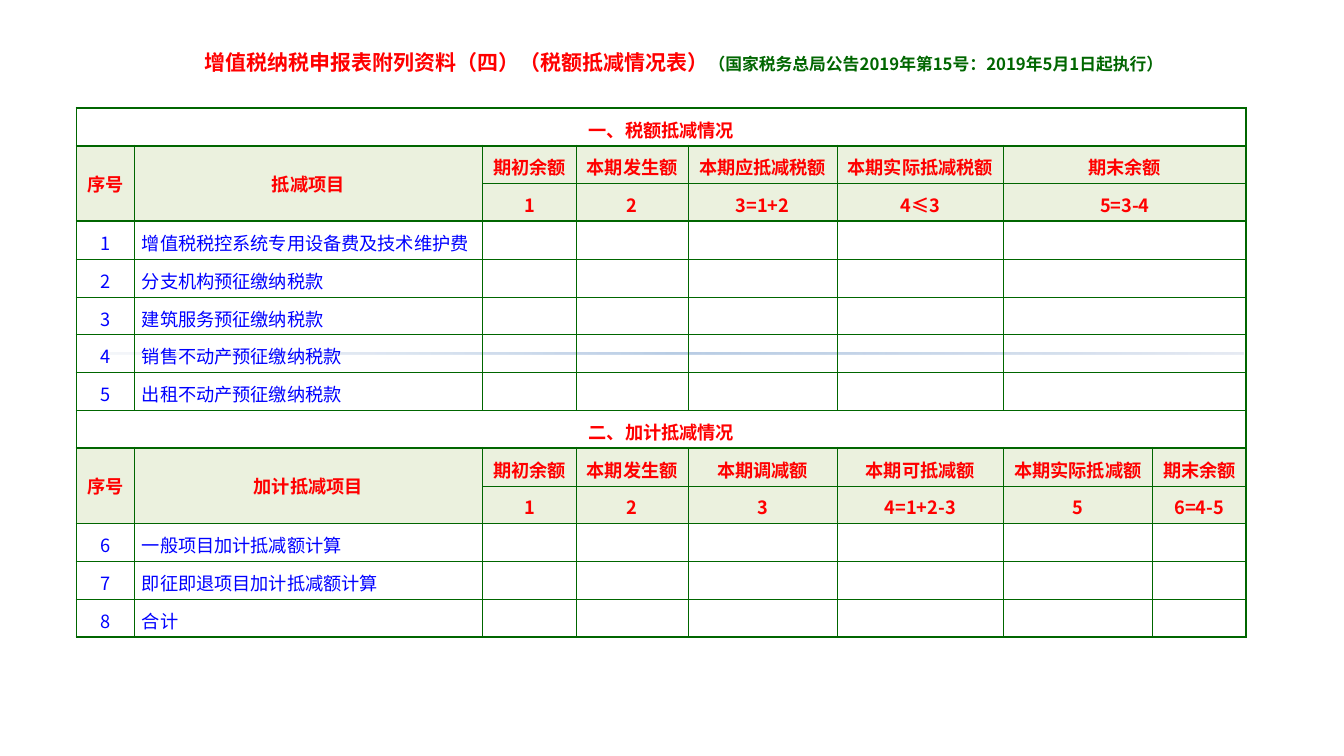
from lxml import etree
from pptx import Presentation
from pptx.dml.color import RGBColor
from pptx.enum.shapes import MSO_SHAPE
from pptx.enum.text import MSO_ANCHOR, PP_ALIGN
from pptx.oxml.ns import qn
from pptx.util import Inches, Pt

FONT = "Noto Sans CJK SC"
RED = RGBColor(0xFF, 0x00, 0x00)
GREEN = RGBColor(0x00, 0x66, 0x00)
BLUE = RGBColor(0x00, 0x00, 0xFF)
HEADER_FILL = RGBColor(0xEB, 0xF1, 0xDE)
PALE_RULE = RGBColor(0xD0, 0xD8, 0xE8)
DEEP_RULE = RGBColor(0x4F, 0x81, 0xBD)
CENTER, LEFT = PP_ALIGN.CENTER, PP_ALIGN.LEFT
MIDDLE = MSO_ANCHOR.MIDDLE
RECTANGLE = MSO_SHAPE.RECTANGLE

TITLE = "增值税纳税申报表附列资料（四）（税额抵减情况表）"
NOTICE = "（国家税务总局公告2019年第15号：2019年5月1日起执行）"
SECTIONS = [
    {
        "title": "一、税额抵减情况",
        "item_heading": "抵减项目",
        "headings": ["期初余额", "本期发生额", "本期应抵减税额", "本期实际抵减税额", "期末余额"],
        "formulas": ["1", "2", "3=1+2", "4≤3", "5=3-4"],
        "items": ["增值税税控系统专用设备费及技术维护费", "分支机构预征缴纳税款",
                  "建筑服务预征缴纳税款", "销售不动产预征缴纳税款", "出租不动产预征缴纳税款"],
    },
    {
        "title": "二、加计抵减情况",
        "item_heading": "加计抵减项目",
        "headings": ["期初余额", "本期发生额", "本期调减额", "本期可抵减额", "本期实际抵减额", "期末余额"],
        "formulas": ["1", "2", "3", "4=1+2-3", "5", "6=4-5"],
        "items": ["一般项目加计抵减额计算", "即征即退项目加计抵减额计算", "合计"],
    },
]
COLUMN_WIDTHS = [0.57, 3.46, 0.93, 1.11, 1.48, 1.65, 1.48, 0.93]
TABLE_LEFT, TABLE_TOP, TABLE_HEIGHT = 0.76, 1.07, 5.25
RULE_STOPS = [(0, PALE_RULE, 20), (50, DEEP_RULE, 40), (100, PALE_RULE, 50)]
THIN, THICK, TABLE_SIZE = 0.25, 1.5, 13
HEADER_ROWS = 3
COLUMNS = len(COLUMN_WIDTHS)
ROWS = sum(HEADER_ROWS + len(section["items"]) for section in SECTIONS)


def add_text(paragraph, text, size=TABLE_SIZE, color=RED, bold=True, align=CENTER):
    paragraph.alignment = align
    run = paragraph.add_run()
    run.text = text
    font = run.font
    font.name, font.size, font.bold = FONT, Pt(size), bold
    font.color.rgb = color
    etree.SubElement(run._r.get_or_add_rPr(), qn("a:ea"), typeface=FONT)


def add_color(parent, color, alpha=100):
    element = etree.SubElement(parent, qn("a:srgbClr"), val=str(color))
    if alpha < 100:
        etree.SubElement(element, qn("a:alpha"), val=str(alpha * 1000))


def add_rule(slide):
    """Add the faint horizontal band that lies behind the table."""
    shape = slide.shapes.add_shape(RECTANGLE, Inches(1), Inches(3.5), Inches(11.34), Inches(0.02))
    shape.shadow.inherit = False
    shape.line.fill.background()
    shape.fill.gradient()
    shape.fill.gradient_angle = 0
    stops = shape._element.spPr.find(".//" + qn("a:gsLst"))
    for stop in list(stops):
        stops.remove(stop)
    for position, color, alpha in RULE_STOPS:
        add_color(etree.SubElement(stops, qn("a:gs"), pos=str(position * 1000)), color, alpha)


def add_title(slide):
    box = slide.shapes.add_textbox(Inches(1.71), Inches(0.44), Inches(10.16), Inches(0.35))
    frame = box.text_frame
    frame.word_wrap = True
    frame.vertical_anchor = MIDDLE
    frame.margin_left = frame.margin_right = frame.margin_top = frame.margin_bottom = 0
    add_text(frame.paragraphs[0], TITLE, size=15)
    add_text(frame.paragraphs[0], NOTICE, size=12, color=GREEN)


def fill_cell(cell, text, **text_format):
    cell.vertical_anchor = MIDDLE
    cell.margin_left = cell.margin_right = cell.margin_top = Inches(0.08)
    cell.margin_bottom = Inches(0.08 if cell.span_height > 1 else 0.03)
    add_text(cell.text_frame.paragraphs[0], text, **text_format)


def add_section(table, top, section):
    """Write one section of the form and return the row after it."""
    last = COLUMNS - 1
    first_item = top + HEADER_ROWS
    after = first_item + len(section["items"])
    table.cell(top, 0).merge(table.cell(top, last))
    fill_cell(table.cell(top, 0), section["title"])
    for column, heading in enumerate(["序号", section["item_heading"]]):
        table.cell(top + 1, column).merge(table.cell(top + 2, column))
        fill_cell(table.cell(top + 1, column), heading)
    last_used = len(section["headings"]) + 1
    if last_used < last:
        for row in range(top + 1, after):
            table.cell(row, last_used).merge(table.cell(row, last))
    for row, labels in enumerate([section["headings"], section["formulas"]], top + 1):
        for column, label in enumerate(labels, 2):
            fill_cell(table.cell(row, column), label)
    first_number = first_item - HEADER_ROWS + 1 if top == 0 else first_item - 2 * HEADER_ROWS + 1
    for offset, item in enumerate(section["items"]):
        row = first_item + offset
        fill_cell(table.cell(row, 0), str(first_number + offset), color=BLUE, bold=False)
        fill_cell(table.cell(row, 1), item, color=BLUE, bold=False, align=LEFT)
    return after


def set_borders(cell, widths):
    properties = cell._tc.get_or_add_tcPr()
    for side, width in widths.items():
        line = etree.SubElement(properties, qn("a:ln" + side), w=str(Pt(width)))
        add_color(etree.SubElement(line, qn("a:solidFill")), GREEN)


def style_cells(table, thick_edges, header_rows):
    for row in range(ROWS):
        for column in range(COLUMNS):
            cell = table.cell(row, column)
            right = column + (cell.span_width if cell.is_merge_origin else 1)
            bottom = row + (cell.span_height if cell.is_merge_origin else 1)
            set_borders(cell, {
                "L": THICK if column == 0 else THIN,
                "R": THICK if right == COLUMNS else THIN,
                "T": THICK if row in thick_edges else THIN,
                "B": THICK if bottom in thick_edges else THIN,
            })
            if row in header_rows:
                cell.fill.solid()
                cell.fill.fore_color.rgb = HEADER_FILL
            else:
                cell.fill.background()
            if not cell.text:
                paragraph = cell.text_frame.paragraphs[0]._p
                etree.SubElement(paragraph, qn("a:endParaRPr"), sz=str(TABLE_SIZE * 100))


def add_form(slide):
    frame = slide.shapes.add_table(ROWS, COLUMNS, Inches(TABLE_LEFT), Inches(TABLE_TOP),
                                   Inches(sum(COLUMN_WIDTHS)), Inches(TABLE_HEIGHT))
    table = frame.table
    table.first_row = table.horz_banding = False
    for column, width in zip(table.columns, COLUMN_WIDTHS):
        column.width = Inches(width)
    for row in table.rows:
        row.height = Inches(TABLE_HEIGHT / ROWS)
    thick_edges, header_rows = {0, ROWS}, set()
    top = 0
    for section in SECTIONS:
        thick_edges |= {top + 1, top + HEADER_ROWS}
        header_rows |= {top + 1, top + 2}
        top = add_section(table, top, section)
    style_cells(table, thick_edges, header_rows)


def main():
    presentation = Presentation()
    presentation.slide_width = Inches(13.34)
    presentation.slide_height = Inches(7.5)
    slide = presentation.slides.add_slide(presentation.slide_layouts[6])
    add_rule(slide)
    add_title(slide)
    add_form(slide)
    presentation.save("out.pptx")


if __name__ == "__main__":
    main()
